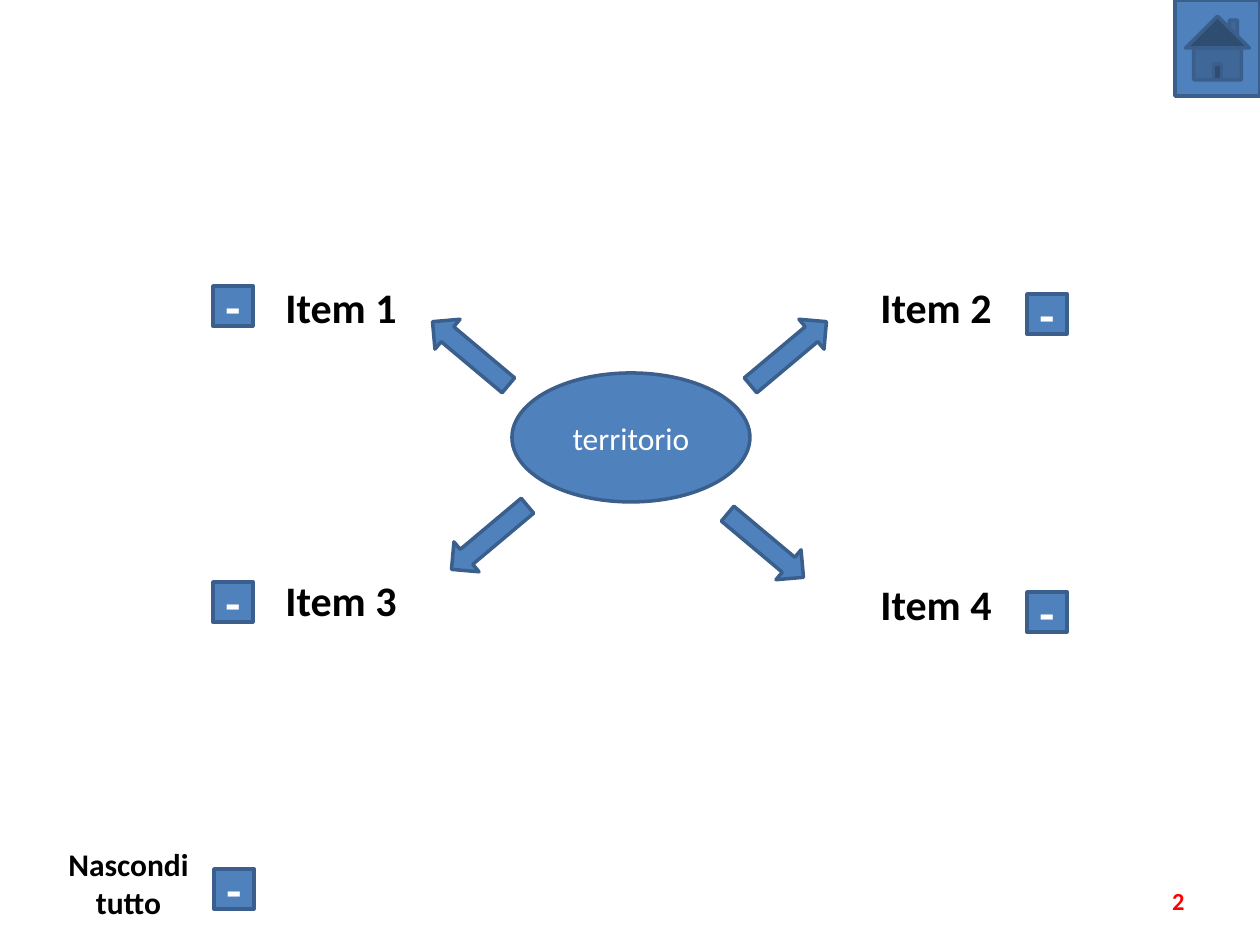
from dataclasses import dataclass
from pptx import Presentation
from pptx.dml.color import RGBColor as Rgb
from pptx.enum.shapes import MSO_SHAPE as Geo
from pptx.enum.text import MSO_ANCHOR as Anchor, MSO_AUTO_SIZE as Fit, PP_ALIGN as Align
from pptx.util import Pt

SCALE = 914400 / 126


@dataclass(frozen=True)
class Theme:
    """Hold the colours and type sizes."""
    fill: Rgb = Rgb.from_string("4F81BD")
    edge: Rgb = Rgb.from_string("3A5F8C")
    ink: Rgb = Rgb.from_string("000000")
    pale: Rgb = Rgb.from_string("FFFFFF")
    red: Rgb = Rgb.from_string("FF0000")
    font: str = "Calibri"
    page: int = 14
    body: int = 18
    item: int = 24
    sign: int = 28


THEME = Theme()


def px(*nums):
    """Turn pixels into EMU."""
    return [round(num * SCALE) for num in nums]


def write(shape, text, size, color, bold=True, align=Align.CENTER):
    """Put one styled paragraph in a shape."""
    frame = shape.text_frame
    frame.word_wrap = True
    para = frame.paragraphs[0]
    para.text = text
    para.alignment = align
    font = para.font
    font.name, font.size, font.bold = THEME.font, Pt(size), bold
    font.color.rgb = color
    return frame


def draw(slide, geo, box, turn=0):
    """Add a filled and outlined preset shape."""
    shape = slide.shapes.add_shape(geo, *px(*box))
    shape.shadow.inherit = False
    shape.fill.solid()
    shape.fill.fore_color.rgb = THEME.fill
    shape.line.color.rgb = THEME.edge
    shape.line.width = Pt(2)
    shape.rotation = turn
    return shape


def label(slide, box, text, size, align):
    """Add a bold black label that grows with its text."""
    area = slide.shapes.add_textbox(*px(*box))
    frame = write(area, text, size, THEME.ink, align=align)
    frame.auto_size = Fit.SHAPE_TO_FIT_TEXT


def button(slide, left, top):
    """Add a square minus button."""
    shape = draw(slide, Geo.ACTION_BUTTON_CUSTOM, (left, top, 40, 40))
    frame = write(shape, "-", THEME.sign, THEME.pale)
    frame.vertical_anchor = Anchor.MIDDLE


def hub(slide, box):
    """Place the central ellipse and its four arrows."""
    left, top, wide, high = box
    oval = draw(slide, Geo.OVAL, (left + 61, top + 69, 238, 129))
    frame = write(oval, "territorio", THEME.body, THEME.pale, bold=False)
    frame.vertical_anchor = Anchor.MIDDLE
    for dx, dy, turn in ((0, 0, -50), (wide - 39, 0, 50),
                         (19, high - 107, 230), (295, high - 99, 130)):
        draw(slide, Geo.UP_ARROW, (left + dx, top + dy, 39, 99), turn)


def item(slide, box, text, shift):
    """Place an item label with its button at the given shift."""
    left, top, wide, high = box
    label(slide, box, text, THEME.item, Align.LEFT)
    button(slide, left + shift[0], top + shift[1])


def hide(slide, box):
    """Place the hide-all label and its button."""
    left, top, wide, high = box
    label(slide, box, "Nascondi tutto", THEME.body, Align.CENTER)
    button(slide, left + wide + 11, top + 30)


def page(slide, box):
    """Place the page number."""
    area = slide.shapes.add_textbox(*px(*box))
    frame = write(area, "2", THEME.page, THEME.red, align=Align.RIGHT)
    frame.vertical_anchor = Anchor.MIDDLE


def main():
    """Build and save the slide."""
    deck = Presentation()
    deck.slide_width, deck.slide_height = px(1260, 945)
    slide = deck.slides.add_slide(deck.slide_layouts[6])
    draw(slide, Geo.ACTION_BUTTON_HOME, (1175, 0, 85, 96))
    page(slide, (903, 876, 294, 50))
    hub(slide, (451, 304, 357, 291))
    for num, (left, top, shift) in enumerate((
            (273, 275, (-60, 11)), (868, 275, (159, 19)),
            (273, 568, (-60, 14)), (868, 572, (159, 20))), 1):
        item(slide, (left, top, 139, 63), f"Item {num}", shift)
    hide(slide, (54, 839, 149, 89))
    deck.save("out.pptx")


if __name__ == "__main__":
    main()
